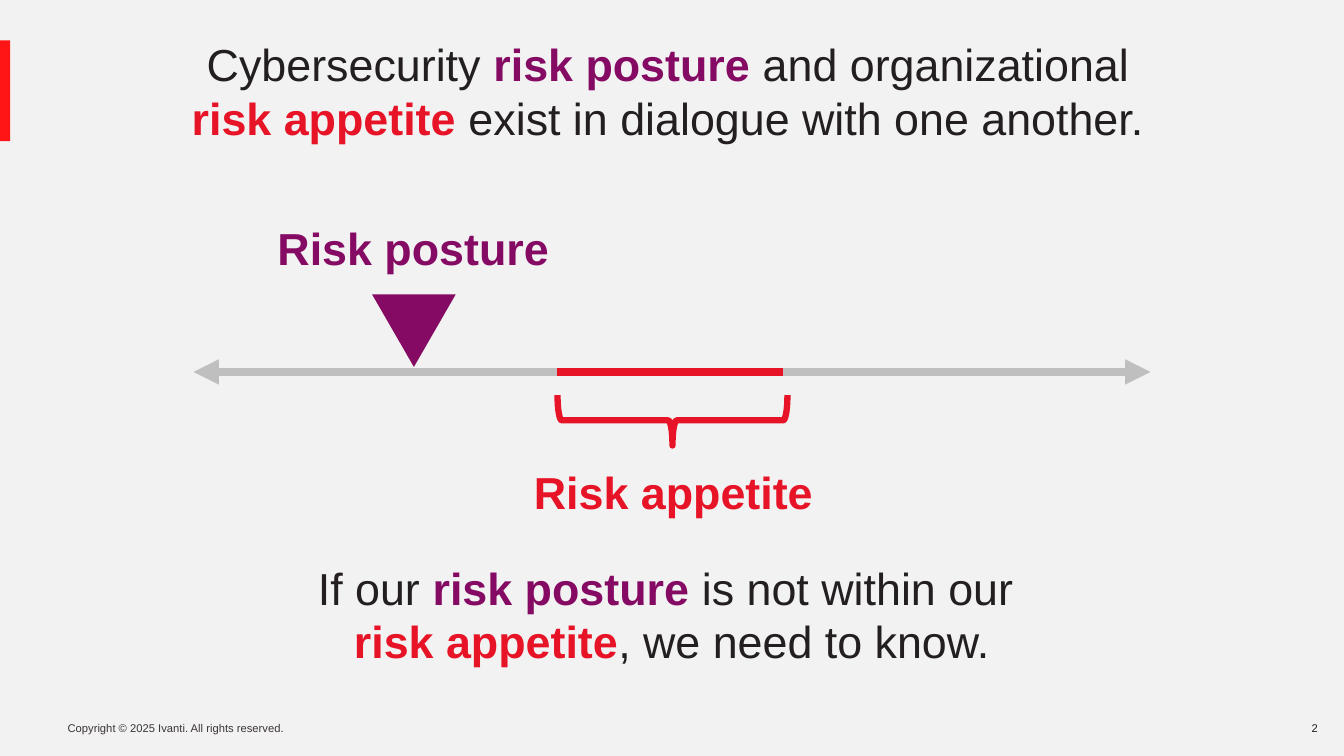
import lxml.etree
import pptx
import pptx.dml.color
import pptx.oxml.ns
import pptx.util
from pptx.enum.shapes import MSO_CONNECTOR, MSO_SHAPE
from pptx.enum.text import MSO_ANCHOR, PP_ALIGN
from pptx.util import Inches

INK, PURPLE, RED, GREY = "231F20", "850A64", "E71326", "BFBFBF"


def color(hex_value):
    return pptx.dml.color.RGBColor.from_string(hex_value)


def add_text(box, runs, size=32, align=PP_ALIGN.CENTER, margins=(0.1, 0.05),
             anchor=MSO_ANCHOR.TOP, wrap=True):
    left, top, width, height = map(Inches, box)
    frame = slide.shapes.add_textbox(left, top, width, height).text_frame
    frame.word_wrap = wrap
    frame.vertical_anchor = anchor
    frame.margin_left, frame.margin_right = Inches(margins[0]), Inches(0.1)
    frame.margin_top = frame.margin_bottom = Inches(margins[1])
    paragraph = frame.paragraphs[0]
    paragraph.alignment = align
    paragraph.font.name = "Arial"
    paragraph.font.size = pptx.util.Pt(size)
    for text, run_color in runs:
        if text == "\n":
            paragraph.add_line_break()
            continue
        run = paragraph.add_run()
        run.text = text
        run.font.color.rgb = color(run_color)
        run.font.bold = run_color in (PURPLE, RED)


presentation = pptx.Presentation()
presentation.slide_width = Inches(13.33)
presentation.slide_height = Inches(7.5)
slide = presentation.slides.add_slide(presentation.slide_layouts[6])
slide.background.fill.solid()
slide.background.fill.fore_color.rgb = color("F2F2F2")

# Footer and page number
add_text((0.67, 7.11, 2.28, 0.24),
         [("Copyright © 2025 Ivanti. All rights reserved.", "3B3436")],
         size=8, align=PP_ALIGN.LEFT, margins=(0, 0.05), wrap=False)
add_text((12.69, 7.11, 0.48, 0.24), [("2", INK)],
         size=8, align=PP_ALIGN.RIGHT, margins=(0, 0.05))

# Title
add_text((0.67, 0.59, 12.01, 0.62),
         [("Cybersecurity ", INK), ("risk posture ", PURPLE),
          ("and organizational", INK), ("\n", INK),
          ("risk appetite ", RED), ("exist in dialogue with one another.", INK)],
         margins=(0, 0), anchor=MSO_ANCHOR.MIDDLE)

# Risk scale with the appetite range on top
for start, end, line_color in [(1.92, 11.41, GREY), (5.52, 7.77, RED)]:
    connector = slide.shapes.add_connector(
        MSO_CONNECTOR.STRAIGHT, Inches(start), Inches(3.69), Inches(end), Inches(3.69))
    connector.line.color.rgb = color(line_color)
    connector.line.width = pptx.util.Pt(6)
    properties = connector._element.spPr
    if line_color == GREY:
        outline = properties.find(pptx.oxml.ns.qn("a:ln"))
        for end_tag in ("a:headEnd", "a:tailEnd"):
            lxml.etree.SubElement(outline, pptx.oxml.ns.qn(end_tag), type="triangle")
    lxml.etree.SubElement(properties, pptx.oxml.ns.qn("a:effectLst"))

# Accent bar, posture marker and appetite brace
for kind, box, rotation, fill in [
        (MSO_SHAPE.RECTANGLE, (0, 0.4, 0.1, 1), 0, "FF1515"),
        (MSO_SHAPE.ISOSCELES_TRIANGLE, (3.69, 2.92, 0.83, 0.72), 180, PURPLE),
        (MSO_SHAPE.LEFT_BRACE, (6.42, 3.03, 0.5, 2.28), 270, None)]:
    shape = slide.shapes.add_shape(kind, *map(Inches, box))
    shape.shadow.inherit = False
    shape.rotation = rotation
    if fill:
        shape.fill.solid()
        shape.fill.fore_color.rgb = color(fill)
        shape.line.fill.background()
    else:
        shape.fill.background()
        shape.line.color.rgb = color(RED)
        shape.line.width = pptx.util.Pt(4.5)

# Scale labels
add_text((2.33, 2.14, 3.54, 0.64), [("Risk posture", PURPLE)])
add_text((4.91, 4.56, 3.54, 0.64), [("Risk appetite", RED)])

# Conclusion
add_text((0.93, 5.51, 11.47, 1.18),
         [("If our ", INK), ("risk posture ", PURPLE),
          ("is not within our ", INK), ("\n", INK),
          ("risk appetite", RED), (", we need to know.", INK)])

presentation.save("out.pptx")
